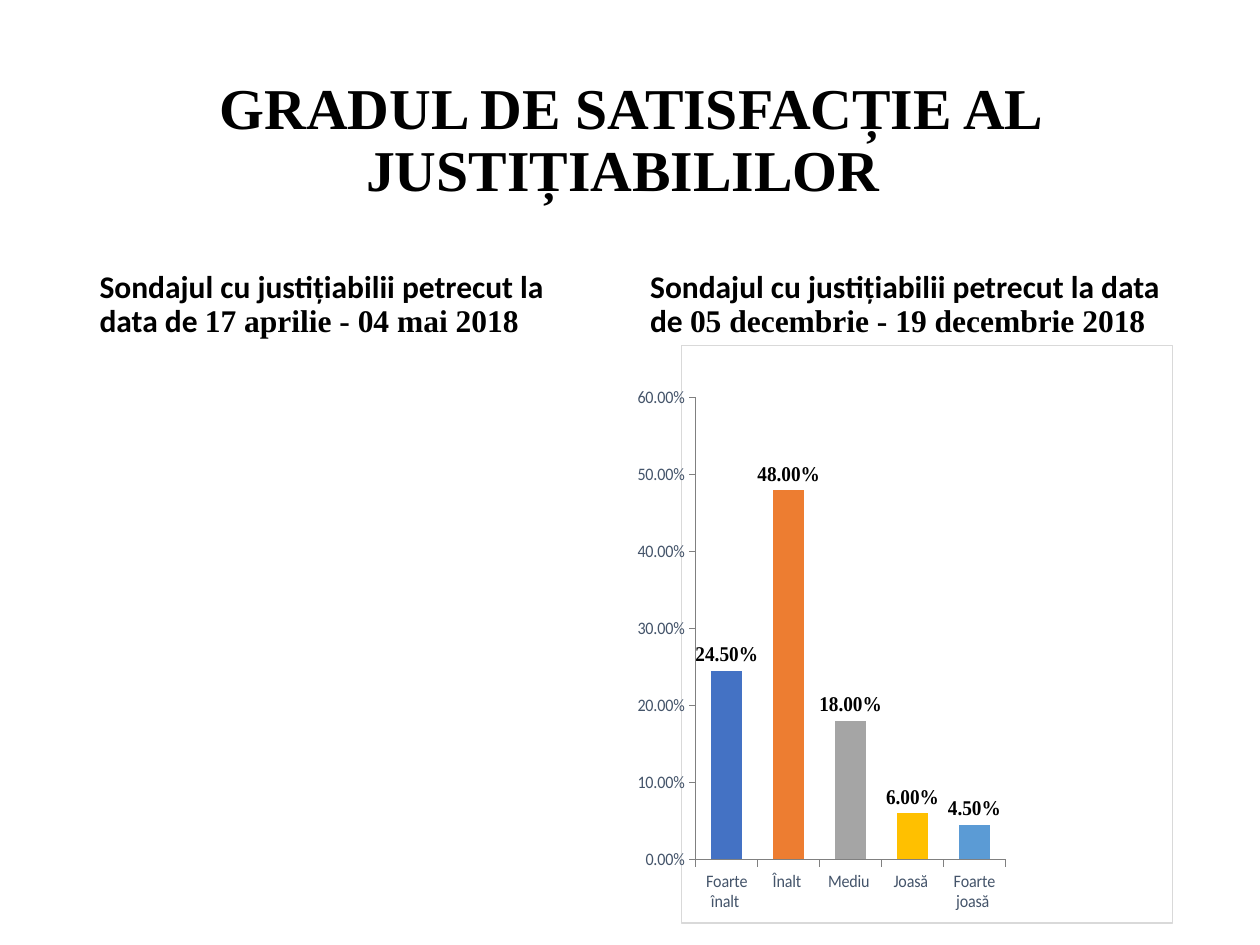
from dataclasses import dataclass

from lxml import etree
from pptx import Presentation
from pptx.chart.data import CategoryChartData
from pptx.dml.color import RGBColor
from pptx.enum.chart import XL_CHART_TYPE as ChartType
from pptx.enum.chart import XL_LABEL_POSITION as LabelPos
from pptx.enum.chart import XL_TICK_MARK as Tick
from pptx.enum.text import MSO_ANCHOR as Anchor
from pptx.enum.text import MSO_AUTO_SIZE as AutoSize
from pptx.enum.text import PP_ALIGN as Align
from pptx.oxml import parse_xml
from pptx.oxml.ns import nsdecls, qn
from pptx.util import Inches, Pt


@dataclass(frozen=True)
class Theme:
    sans: str = "Calibri"
    serif: str = "Times New Roman"
    text: str = "000000"
    axis_text: str = "44546A"
    axis_line: str = "808080"
    paper: str = "FFFFFF"
    border: str = "D9D9D9"
    bars: tuple = ("4472C4", "ED7D31", "A5A5A5", "FFC000", "5B9BD5")
    title_size: float = 33
    heading_size: float = 18
    axis_size: float = 10
    label_size: float = 12


THEME = Theme()
SURVEY = "Sondajul cu justițiabilii petrecut la data de "
RATINGS = {
    "Foarte înalt ": 0.245,
    "Înalt ": 0.48,
    "Mediu ": 0.18,
    "Joasă ": 0.06,
    "Foarte joasă ": 0.045,
}


def format_font(font, name, size, color, bold=False):
    font.name = name
    font.size = Pt(size)
    font.bold = bold
    font.color.rgb = RGBColor.from_string(color)


def write_text(sp, runs, box, size, anchor, align=Align.LEFT, before=0):
    sp.left, sp.top, sp.width, sp.height = map(Inches, box)
    tf = sp.text_frame
    tf.word_wrap = True
    tf.auto_size = AutoSize.NONE
    tf.vertical_anchor = anchor
    p = tf.paragraphs[0]
    p.alignment = align
    p.line_spacing = 0.9
    p.space_before = Pt(before)
    for text, font_name in runs:
        r = p.add_run()
        r.text = text
        format_font(r.font, font_name, size, THEME.text, bold=True)


def add_heading(sp, dates, box):
    runs = [(SURVEY, THEME.sans), (dates, THEME.serif)]
    write_text(sp, runs, box, THEME.heading_size, Anchor.BOTTOM, before=7.5)


def style_axis(axis):
    axis.has_major_gridlines = False
    axis.major_tick_mark = Tick.OUTSIDE
    axis.minor_tick_mark = Tick.NONE
    axis.format.line.color.rgb = RGBColor.from_string(THEME.axis_line)
    axis.format.line.width = Pt(0.75)
    format_font(axis.tick_labels.font, THEME.sans, THEME.axis_size, THEME.axis_text)


def set_plot_layout(chart, x, y, w, h):
    plot_area = chart.plots[0]._element.getparent()
    for old in plot_area.findall(qn("c:layout")):
        plot_area.remove(old)
    layout = parse_xml(f"<c:layout {nsdecls('c')}><c:manualLayout/></c:layout>")
    settings = {"layoutTarget": "inner", "xMode": "edge", "yMode": "edge",
                "x": x, "y": y, "w": w, "h": h}
    for tag, value in settings.items():
        etree.SubElement(layout[0], qn(f"c:{tag}"), val=str(value))
    plot_area.insert(0, layout)


def frame_chart(chart):
    sp_pr = parse_xml(
        f"<c:spPr {nsdecls('c', 'a')}>"
        f'<a:solidFill><a:srgbClr val="{THEME.paper}"/></a:solidFill>'
        f'<a:ln w="{Pt(0.75)}"><a:solidFill><a:srgbClr val="{THEME.border}"/>'
        "</a:solidFill></a:ln></c:spPr>"
    )
    chart._chartSpace.chart.addnext(sp_pr)


def add_ratings_chart(slide, box):
    data = CategoryChartData(number_format="0.00%")
    data.categories = list(RATINGS)
    data.add_series("Series 1", list(RATINGS.values()))
    chart = slide.shapes.add_chart(
        ChartType.COLUMN_CLUSTERED, *map(Inches, box), data).chart
    chart.has_title = False
    chart.has_legend = False
    format_font(chart.font, THEME.sans, THEME.axis_size, THEME.axis_text)
    style_axis(chart.category_axis)
    axis = chart.value_axis
    style_axis(axis)
    axis.minimum_scale, axis.maximum_scale, axis.major_unit = 0, 0.6, 0.1
    axis.tick_labels.number_format = "0.00%"
    axis.tick_labels.number_format_is_linked = False

    plot = chart.plots[0]
    plot.gap_width = 100
    plot.vary_by_categories = False
    for i, color in enumerate(THEME.bars):
        fill = plot.series[0].points[i].format.fill
        fill.solid()
        fill.fore_color.rgb = RGBColor.from_string(color)
    labels = plot.series[0].data_labels
    labels.show_value = True
    labels.position = LabelPos.OUTSIDE_END
    labels.number_format = "0.00%"
    labels.number_format_is_linked = False
    format_font(labels.font, THEME.serif, THEME.label_size, THEME.text, bold=True)
    set_plot_layout(chart, 0.03, 0.09, 0.63, 0.8)
    frame_chart(chart)


def main():
    prs = Presentation()
    prs.slide_width, prs.slide_height = Inches(10), Inches(7.5)
    slide = prs.slides.add_slide(prs.slide_layouts.get_by_name("Comparison"))
    holders = {sp.placeholder_format.idx: sp for sp in slide.placeholders}

    write_text(holders[0], [("GRADUL DE SATISFACȚIE AL JUSTIȚIABILILOR ", THEME.serif)],
               (0.69, 0.4, 8.62, 1.45), THEME.title_size, Anchor.MIDDLE, Align.CENTER)
    add_heading(holders[1], "17 aprilie - 04 mai 2018", (0.69, 1.84, 4.23, 0.9))
    add_heading(holders[3], "05 decembrie - 19 decembrie 2018", (5.06, 1.84, 4.25, 0.9))
    for idx in (2, 4):
        sp = holders[idx]._element
        sp.getparent().remove(sp)
    add_ratings_chart(slide, (5.06, 2.74, 4.25, 4.59))
    prs.save("out.pptx")


if __name__ == "__main__":
    main()
